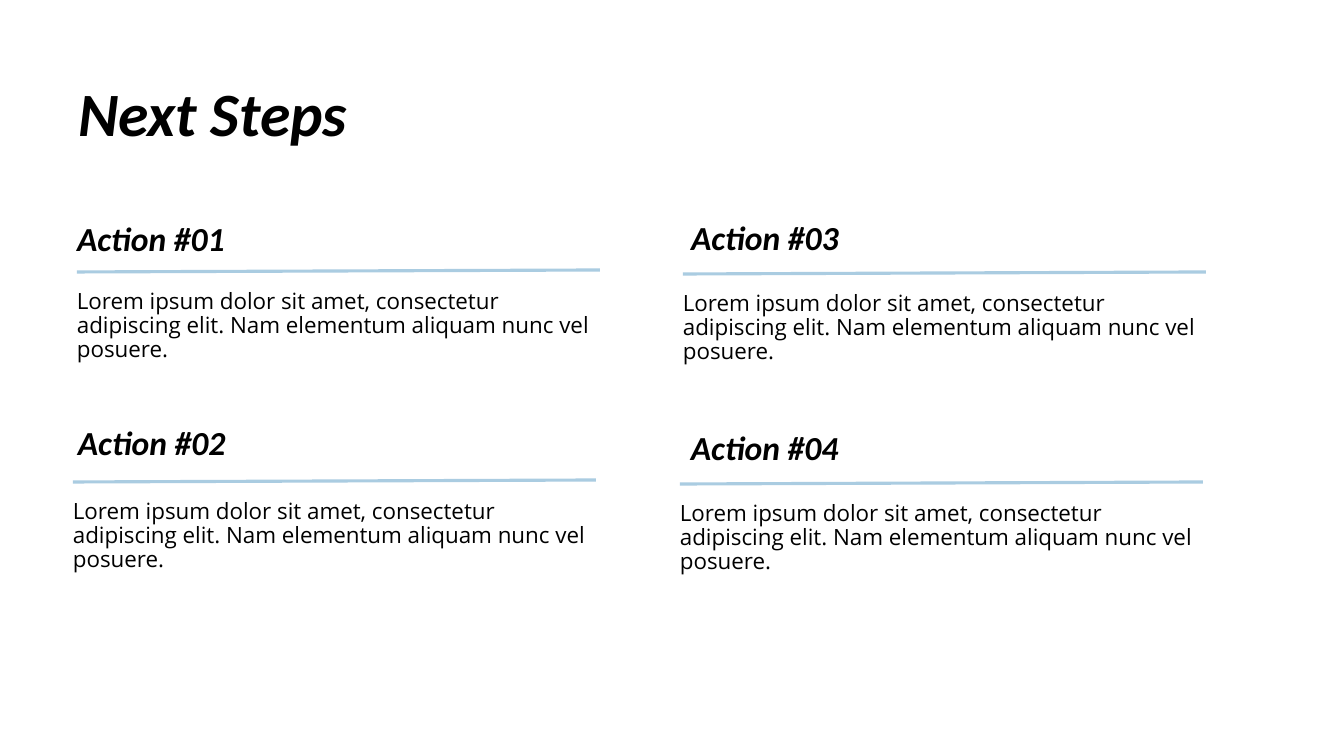
from pptx import Presentation
from pptx.dml.color import RGBColor
from pptx.enum.shapes import MSO_CONNECTOR
from pptx.enum.text import MSO_ANCHOR, MSO_AUTO_SIZE, PP_ALIGN
from pptx.oxml.ns import qn
from pptx.util import Emu, Pt
from lxml import etree

# Content
TITLE = "Next Steps"
DETAIL = ("Lorem ipsum dolor sit amet, consectetur adipiscing elit. "
          "Nam elementum aliquam nunc vel posuere.")
# heading, heading left/top, detail left/top, layout placeholder (if any)
ACTIONS = [
    ("Action #01", (67, 174), (67, 285), 1),
    ("Action #02", (68, 378), (63, 495), None),
    ("Action #03", (681, 173), (673, 287), 3),
    ("Action #04", (681, 383), (670, 497), None),
]
TITLE_BOX = (68, 78, 420, 97)
HEAD_SIZE = (533, 90)
DETAIL_SIZE = (534, 60)
RULE_INSET, RULE_GAP, RULE_WIDTH, RULE_RISE = 10, 13, 523, 2
COLORS = {"text": "000000", "rule": "AACCE1", "back": "FFFFFF"}


def px(n):
    return Emu(round(n * 914400 / 100.8))


def write(sp, box, text, font, size, strong=False, anchor=MSO_ANCHOR.TOP):
    sp.left, sp.top, sp.width, sp.height = map(px, box)
    tf = sp.text_frame
    tf.text = text
    tf.word_wrap = True
    tf.auto_size = MSO_AUTO_SIZE.NONE
    tf.vertical_anchor = anchor
    p = tf.paragraphs[0]
    p.alignment = PP_ALIGN.LEFT
    p.line_spacing = 0.9
    p.space_before = Pt(0)
    f = p.runs[0].font
    f.name, f.size = font, Pt(size)
    f.bold = f.italic = strong
    f.color.rgb = RGBColor.from_string(COLORS["text"])


prs = Presentation()
prs.slide_width, prs.slide_height = px(1344), px(756)
s = prs.slides.add_slide(prs.slide_layouts[4])
s.background.fill.solid()
s.background.fill.fore_color.rgb = RGBColor.from_string(COLORS["back"])
holders = {ph.placeholder_format.idx: ph for ph in s.placeholders}

# Title
write(s.shapes.title, TITLE_BOX, TITLE, "Calibri", 44, strong=True)

# Actions: heading, rule, detail
for name, head_at, (x, y), idx in ACTIONS:
    head = holders[idx] if idx else s.shapes.add_textbox(0, 0, 0, 0)
    write(head, head_at + HEAD_SIZE, name, "Calibri", 24, strong=True,
          anchor=MSO_ANCHOR.BOTTOM)

    x1, y1 = x + RULE_INSET, y - RULE_GAP
    rule = s.shapes.add_connector(MSO_CONNECTOR.STRAIGHT, px(x1), px(y1),
                                  px(x1 + RULE_WIDTH), px(y1 - RULE_RISE))
    rule.line.color.rgb = RGBColor.from_string(COLORS["rule"])
    rule.line.width = Pt(2.25)
    etree.SubElement(rule._element.spPr, qn("a:effectLst"))

    detail = s.shapes.add_textbox(0, 0, 0, 0)
    write(detail, (x, y) + DETAIL_SIZE, DETAIL, "Open Sans", 16)

# Remove unused placeholders
for ph in list(s.placeholders):
    if not ph.text_frame.text:
        ph._element.getparent().remove(ph._element)

prs.save("out.pptx")
